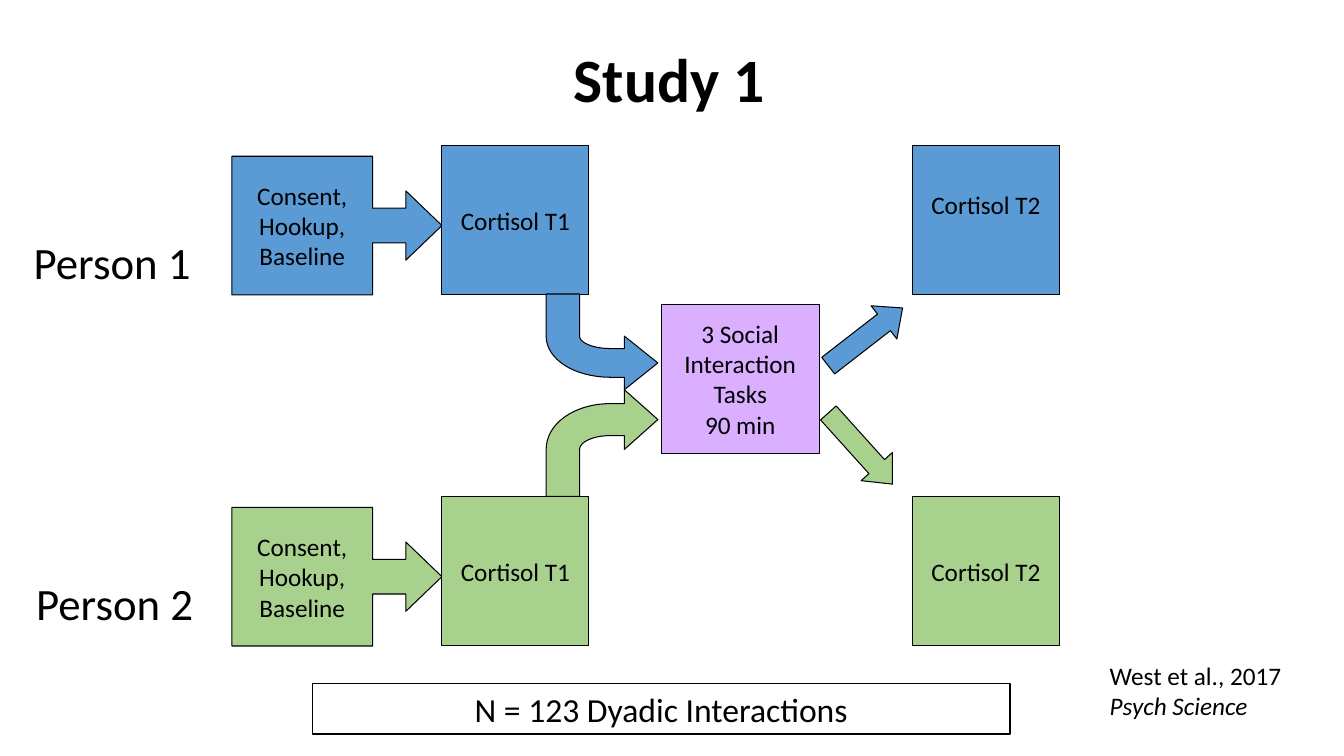
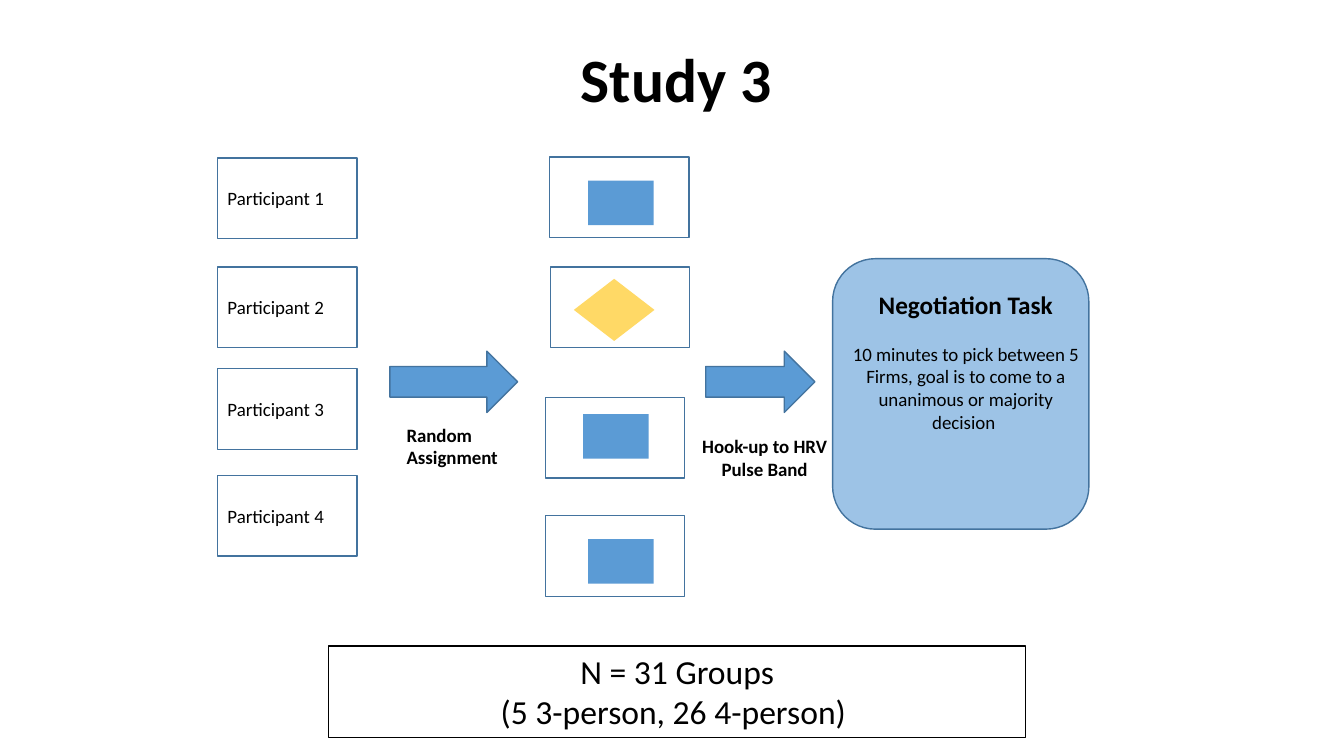
from pptx import Presentation
from pptx.dml.color import RGBColor as Rgb
from pptx.enum.shapes import MSO_SHAPE as Kind
from pptx.enum.text import MSO_ANCHOR as Anchor, PP_ALIGN as Align
from pptx.util import Inches, Pt

ROWS = 90
BLUE, GREEN, PURPLE = "5B9BD5", "A9D18E", "DBAFFF"
PALE, GOLD, STEEL = "9DC3E6", "FFD966", "43739E"
BLACK, WHITE = "000000", "FFFFFF"
LEFT, MID = Align.LEFT, Align.CENTER
TOP, HALF = Anchor.TOP, Anchor.MIDDLE


def color(code):
    return Rgb.from_string(code)


def assign(item, values):
    for name, value in values.items():
        setattr(item, name, value)


def curve(start, one, two, end, steps=16):
    """Points of a Bezier curve, both ends included."""
    spots = []
    for step in range(steps + 1):
        t = step / steps
        parts = ((1 - t) ** 3, 3 * t * (1 - t) ** 2, 3 * t * t * (1 - t), t ** 3)
        spots.append(tuple(
            sum(part * spot[axis] for part, spot in zip(parts, (start, one, two, end)))
            for axis in (0, 1)))
    return spots


# Arrow that rises and then bends to the right, as shares of its own box
BEND = [
    (1, 0.28), (0.7, 0), (0.7, 0.13),
    *curve((0.58, 0.13), (0.25, 0.13), (0, 0.32), (0, 0.56)),
    (0, 1), (0.3, 1),
    *curve((0.3, 0.56), (0.3, 0.49), (0.42, 0.43), (0.58, 0.43)),
    (0.7, 0.43), (0.7, 0.56),
]


class Deck:
    """Places elements on a grid of 160 columns and 90 rows."""

    def __init__(self):
        self.file = Presentation()
        assign(self.file, {"slide_width": Inches(13.33), "slide_height": Inches(7.5)})
        self.cell = self.file.slide_height / ROWS
        self.shapes = None

    def page(self, title):
        self.shapes = self.file.slides.add_slide(self.file.slide_layouts[6]).shapes
        self.label((11.5, 1.1, 138, 17.4), [title], 44, bold=True, anchor=HALF, lead=0.9)

    def units(self, box):
        return [round(size * self.cell) for size in box]

    def paint(self, shape, fill, line, width):
        shape.shadow.inherit = False
        for part, code in ((shape.fill, fill), (shape.line.fill, line)):
            if code:
                part.solid()
                part.fore_color.rgb = color(code)
            else:
                part.background()
        if line:
            shape.line.width = Pt(width)

    def letter(self, shape, paras, size, bold=False, align=MID, anchor=HALF,
               wrap=True, lead=None, foot=0.05):
        """Fill in paragraphs; each is a string or a list of (text, italic)."""
        frame = shape.text_frame
        assign(frame, {"word_wrap": wrap, "vertical_anchor": anchor,
                       "margin_bottom": Inches(foot)})
        for index, runs in enumerate(paras):
            para = frame.add_paragraph() if index else frame.paragraphs[0]
            assign(para, {"alignment": align, "line_spacing": lead})
            for text, slant in [(runs, False)] if isinstance(runs, str) else runs:
                run = para.add_run()
                run.text = text
                assign(run.font, {"name": "Calibri", "size": Pt(size),
                                  "bold": bold, "italic": slant})
                run.font.color.rgb = color(BLACK)
        return frame

    def label(self, box, paras, size, **style):
        shape = self.shapes.add_textbox(*self.units(box))
        return self.letter(shape, paras, size, **{"anchor": TOP, **style})

    def shape(self, box, fill=None, line=STEEL, kind=Kind.RECTANGLE, width=1,
              turn=0, tweaks=()):
        shape = self.shapes.add_shape(kind, *self.units(box))
        shape.rotation = turn
        for index, value in enumerate(tweaks):
            shape.adjustments[index] = value
        self.paint(shape, fill, line, width)
        return shape

    def step(self, box, fill, paras, foot=0.05, **style):
        shape = self.shape(box, fill, BLACK, width=0.75, **style)
        self.letter(shape, paras, 18, wrap=False, foot=foot)

    def bend(self, box, fill, flip=False):
        left, top, wide, high = self.units(box)
        spots = [(round(left + wide * x), round(top + high * (1 - y if flip else y)))
                 for x, y in BEND]
        pen = self.shapes.build_freeform(*spots[0], scale=1.0)
        pen.add_line_segments(spots[1:], close=True)
        self.paint(pen.convert_to_shape(), fill, BLACK, 0.75)

    def count(self, box, paras):
        self.letter(self.shape(box, WHITE, BLACK), paras, 24, anchor=TOP)


def dyads(deck):
    deck.page("Study 1 ")
    deck.bend((65, 46.4, 13.3, 12.7), GREEN)
    for fill, drop, foot in ((BLUE, 0, 0.35), (GREEN, 41.8, 0.05)):
        deck.step((27.6, 18.6 + drop, 25, 16.5), fill, ["Consent,", "Hookup,", "Baseline"],
                  kind=Kind.RIGHT_ARROW_CALLOUT, tweaks=(0.25, 0.25, 0.26, 0.67))
        deck.step((52.6, 17.3 + drop, 17.5, 17.8), fill, ["Cortisol T1"],
                  kind=Kind.FLOWCHART_PROCESS)
        deck.step((108.6, 17.3 + drop, 17.5, 17.8), fill, ["Cortisol T2"], foot)
    deck.step((78.7, 36.2, 18.8, 17.8), PURPLE,
              ["3 Social", "Interaction", "Tasks", "90 min"])
    for box, fill, turn in (((97.4, 37.6, 11.2, 5), BLUE, 322.2),
                            ((96.7, 50.9, 11.4, 5), GREEN, 48)):
        deck.shape(box, fill, BLACK, Kind.RIGHT_ARROW, 0.75, turn, (0.5, 0.56))
    deck.bend((65, 35, 13.3, 11.4), BLUE, flip=True)
    for name, left, top in (("Person 1", 2.3, 27.4), ("Person 2", 2.6, 68)):
        deck.label((left, top, 22.1, 7.7), [name], 32)
    deck.label((130.9, 78, 25.9, 8.5),
               [[("West et al., 2017 ", False), ("Psych Science", True)]], 18, align=LEFT)
    deck.count((37.2, 81.4, 83, 6), ["N = 123 Dyadic Interactions"])


def groups(deck):
    deck.page("Study 3")
    card, chip = (16.6, 9.6), (7.8, 5.3)
    for number, top in enumerate((18.8, 31.8, 43.9, 56.6), 1):
        deck.letter(deck.shape((25.9, top, *card)), [f"Participant {number}"], 13.5,
                    align=LEFT)
    for spot in ((65.4, 18.7), (65.5, 31.8), (64.9, 47.3), (64.9, 61.4)):
        deck.shape((*spot, *card))
    for spot in ((70, 21.5), (69.4, 49.3), (70, 64.2)):
        deck.shape((*spot, *chip), BLUE, None)
    deck.shape((68.3, 33.2, 9.6, 7.4), GOLD, None, Kind.DIAMOND)
    for left, wide in ((46.4, 15.2), (84, 13)):
        deck.shape((left, 41.8, wide, 7.3), BLUE, kind=Kind.RIGHT_ARROW)
    deck.label((47.2, 49.8, 18.4, 8), ["Random Assignment"], 13.5, bold=True, align=LEFT)
    deck.label((81.5, 51.2, 19, 11.3), ["Hook-up to HRV Pulse Band"], 13.5, bold=True)
    deck.shape((99.1, 30.8, 30.5, 32.2), PALE, kind=Kind.ROUNDED_RECTANGLE)
    task = deck.label((99.7, 33.8, 30.5, 23.9), [
        "Negotiation Task",
        "10 minutes to pick between 5 Firms, goal is to come to a "
        "unanimous or majority decision "], 13.5)
    head, body = task.paragraphs
    assign(head.runs[0].font, {"size": Pt(18), "bold": True})
    body.space_before = Pt(16.5)
    deck.count((39.1, 76.9, 83, 10.9), ["N = 31 Groups", "(5 3-person, 26 4-person) "])


def main():
    deck = Deck()
    dyads(deck)
    groups(deck)
    deck.file.save("out.pptx")


if __name__ == "__main__":
    main()
